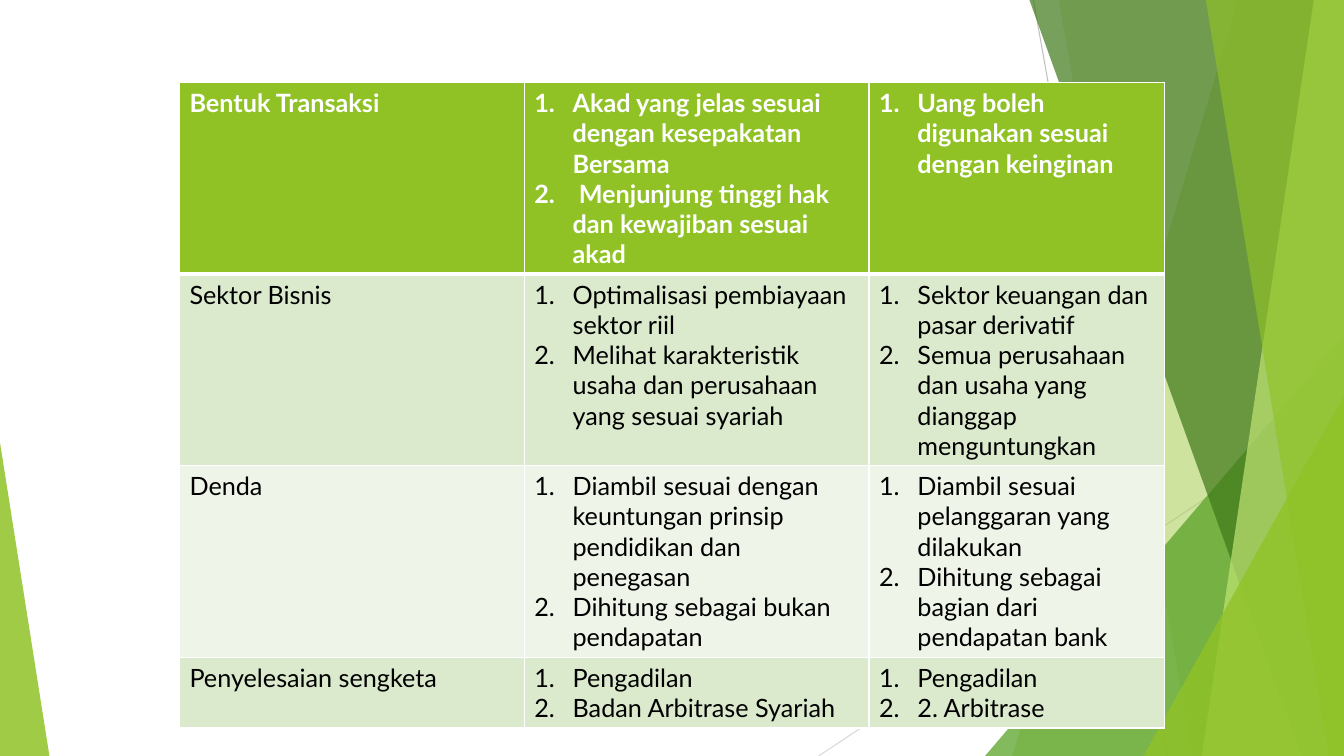
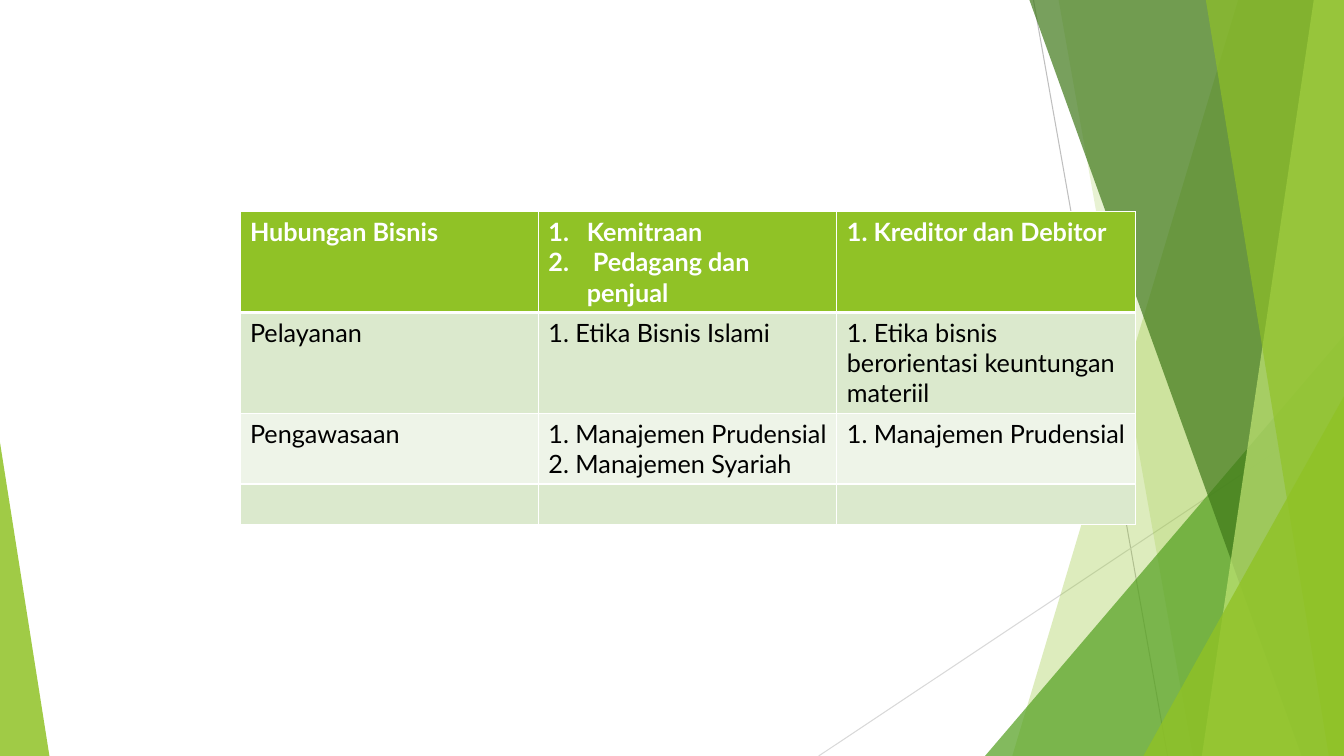
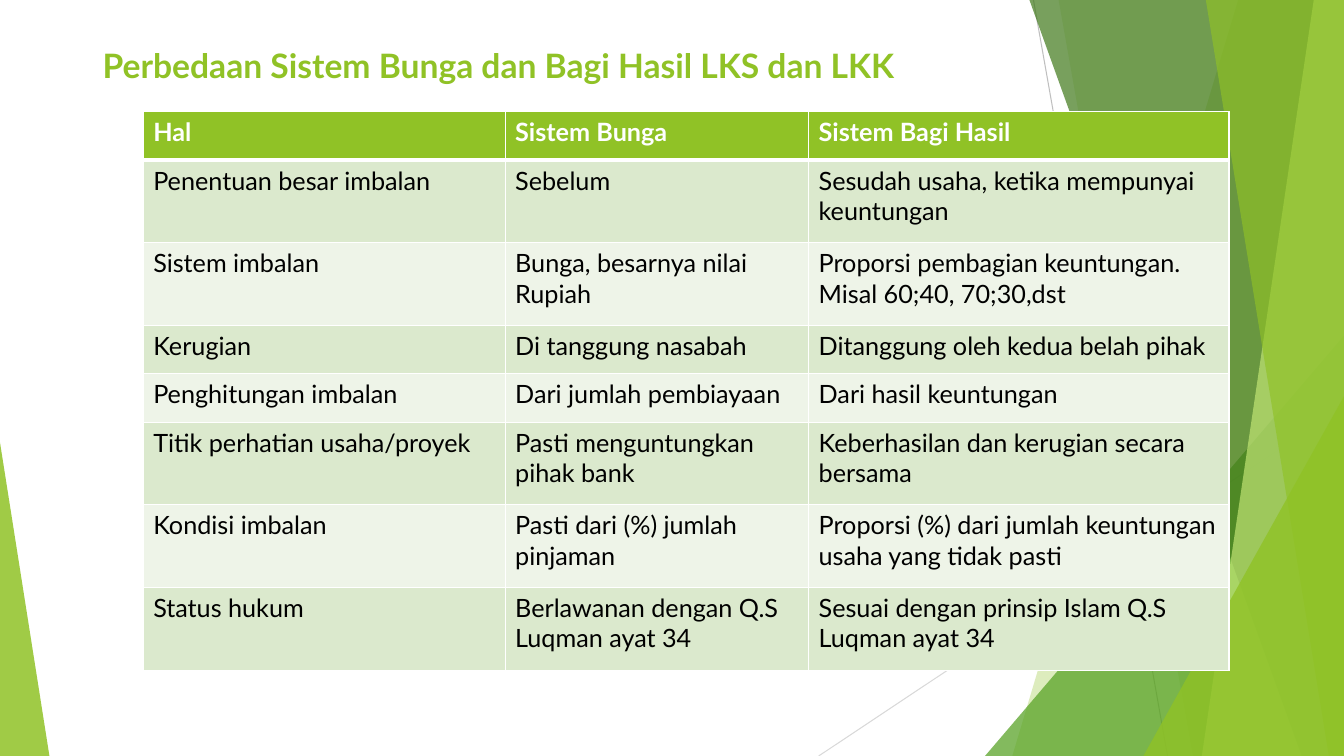
import pptx
import pptx.util
import pptx.dml.color
import pptx.enum.shapes
import pptx.oxml
import pptx.oxml.ns
import lxml.etree

WIDE, HIGH = 13.33, 7.5
FONT = "Lato"
HUES = {
    "lime": "90C226", "leaf": "54A021", "moss": "3F7819", "pale": "C0E474",
    "band": "DBE9CD", "mist": "EEF4E8", "ink": "000000", "white": "FFFFFF",
    "gray": "BFBFBF", "ash": "D9D9D9",
}

LINES = [
    ((10.25, 0), (11.58, HIGH), "gray"),
    ((WIDE, 4.03), (8.12, HIGH), "ash"),
]
DECOR = [
    ("ribbon", (12.28, 10.04), "lime", 30),
    ("ribbon", (10.5, 11.83), "lime", 20),
    ("corner", (9.77, 3.33, 3.56, 1), "leaf", 72),
    ("ribbon", (10.21, 12.91), "moss", 70),
    ("ribbon", (13.03, 11.92), "pale", 70),
    ("ribbon", (11.96, 13.18), "lime", 65),
    ("corner", (11.34, 3.93, 1.99, 1), "lime", 80),
    ("corner", (0, 4.39, 0.49, 0), "lime", 85),
]

SLIDES = [
    {
        "at": (1.78, 0.82),
        "cols": [3.42, 3.42, 2.93],
        "rows": [1.9, 1.9, 1.9, 0.7],
        "cells": [
            ["Bentuk Transaksi",
             ["Akad yang jelas sesuai dengan kesepakatan Bersama",
              " Menjunjung tinggi hak dan kewajiban sesuai akad"],
             ["Uang boleh digunakan sesuai dengan keinginan"]],
            ["Sektor Bisnis",
             ["Optimalisasi pembiayaan sektor riil",
              "Melihat karakteristik usaha dan perusahaan yang sesuai syariah"],
             ["Sektor keuangan dan pasar derivatif",
              "Semua perusahaan dan usaha yang dianggap menguntungkan"]],
            ["Denda",
             ["Diambil sesuai dengan keuntungan prinsip pendidikan dan penegasan",
              "Dihitung sebagai bukan pendapatan"],
             ["Diambil sesuai pelanggaran yang dilakukan",
              "Dihitung sebagai bagian dari pendapatan bank"]],
            ["Penyelesaian sengketa",
             ["Pengadilan", "Badan Arbitrase Syariah"],
             ["Pengadilan", "2. Arbitrase"]],
        ],
    },
    {
        "at": (2.38, 2.1),
        "cols": [2.96] * 3,
        "rows": [1, 1, 0.7, 0.4],
        "cells": [
            ["Hubungan Bisnis", ["Kemitraan", " Pedagang dan penjual"],
             "1. Kreditor dan Debitor"],
            ["Pelayanan", "1. Etika Bisnis Islami",
             "1. Etika bisnis berorientasi keuntungan materiil"],
            ["Pengawasaan", "1. Manajemen Prudensial 2. Manajemen Syariah",
             "1. Manajemen Prudensial"],
            ["", "", ""],
        ],
    },
    {
        "title": "Perbedaan Sistem Bunga dan Bagi Hasil LKS dan LKK",
        "at": (1.42, 1.11),
        "cols": [3.59, 3.01, 4.17],
        "rows": [0.48, 0.82, 0.82, 0.48, 0.48, 0.82, 0.82, 0.82],
        "cells": [
            ["Hal", "Sistem Bunga", "Sistem Bagi Hasil"],
            ["Penentuan besar imbalan", "Sebelum",
             "Sesudah usaha, ketika mempunyai keuntungan"],
            ["Sistem imbalan", "Bunga, besarnya nilai Rupiah",
             "Proporsi pembagian keuntungan. Misal 60;40, 70;30,dst"],
            ["Kerugian", "Di tanggung nasabah",
             "Ditanggung oleh kedua belah pihak"],
            ["Penghitungan imbalan", "Dari jumlah pembiayaan",
             "Dari hasil keuntungan"],
            ["Titik perhatian usaha/proyek", "Pasti menguntungkan pihak bank",
             "Keberhasilan dan kerugian secara bersama"],
            ["Kondisi imbalan", "Pasti dari (%) jumlah pinjaman",
             "Proporsi (%) dari jumlah keuntungan usaha yang tidak pasti"],
            ["Status hukum", "Berlawanan dengan Q.S Luqman ayat 34",
             "Sesuai dengan prinsip Islam Q.S Luqman ayat 34"],
        ],
    },
]

inch = pptx.util.Inches
tag = pptx.oxml.ns.qn


def tint(name):
    return pptx.dml.color.RGBColor.from_string(HUES[name])


def paint(fill, name):
    fill.solid()
    fill.fore_color.rgb = tint(name)


def style(para, size, hue, bold):
    font = para.font
    font.name, font.size, font.bold = FONT, pptx.util.Pt(size), bold
    font.color.rgb = tint(hue)


def draw_line(shapes, start, end, hue):
    kind = pptx.enum.shapes.MSO_CONNECTOR.STRAIGHT
    line = shapes.add_connector(kind, *map(inch, start + end))
    line.line.color.rgb = tint(hue)
    line.line.width = pptx.util.Pt(0.75)
    props = line.element.find(tag("p:spPr"))
    lxml.etree.SubElement(props, tag("a:effectLst"))
    return line


def draw_form(shapes, kind, spot, hue, alpha):
    if kind == "ribbon":
        top, base = spot
        edge = [(WIDE, 0), (WIDE, HIGH), (base, HIGH)]
        form = shapes.build_freeform(top * 100, 0, scale=inch(0.01))
        form.add_line_segments([(x * 100, y * 100) for x, y in edge])
        shape = form.convert_to_shape()
    else:
        left, top, width, tip = spot
        shape = shapes.add_shape(
            pptx.enum.shapes.MSO_SHAPE.ISOSCELES_TRIANGLE,
            *map(inch, (left, top, width, HIGH - top)))
        shape.adjustments[0] = tip
    shape.shadow.inherit = False
    shape.line.fill.background()
    paint(shape.fill, hue)
    color = shape.element.find(".//" + tag("a:srgbClr"))
    lxml.etree.SubElement(color, tag("a:alpha"), val=str(alpha * 1000))
    return shape


def dress(layout, slide):
    home = layout.shapes.element
    for holder in list(layout.placeholders):
        home.remove(holder.element)
    parts = [draw_line(slide.shapes, *line) for line in LINES]
    parts += [draw_form(slide.shapes, *form) for form in DECOR]
    for part in parts:
        home.append(part.element)


def number(para):
    props = para._p.get_or_add_pPr()
    props.set("marL", str(inch(0.38)))
    props.set("indent", str(-inch(0.38)))
    lxml.etree.SubElement(props, tag("a:buFont"), typeface="+mj-lt")
    lxml.etree.SubElement(props, tag("a:buAutoNum"), type="arabicPeriod")


def border(cell, row):
    props = cell._tc.get_or_add_tcPr()
    sides = {"lnL": 1, "lnR": 1, "lnT": 3 if row == 1 else 1,
             "lnB": 3 if row == 0 else 1}
    for slot, (side, width) in enumerate(sides.items()):
        line = lxml.etree.Element(tag("a:" + side), w=str(pptx.util.Pt(width)))
        fill = lxml.etree.SubElement(line, tag("a:solidFill"))
        lxml.etree.SubElement(fill, tag("a:srgbClr"), val=HUES["white"])
        props.insert(slot, line)


def fill_cell(cell, text, row):
    head = row == 0
    paint(cell.fill, "lime" if head else "band" if row % 2 else "mist")
    border(cell, row)
    listed = isinstance(text, list)
    cell.text = "\n".join(text) if listed else text
    for para in cell.text_frame.paragraphs:
        if listed:
            number(para)
        style(para, 18, "white" if head else "ink", head)


def draw_table(slide, page):
    cols, rows = page["cols"], page["rows"]
    size = (sum(cols), sum(rows))
    table = slide.shapes.add_table(
        len(rows), len(cols), *map(inch, page["at"] + size)).table
    table.horz_banding = False
    for col, width in zip(table.columns, cols):
        col.width = inch(width)
    for row, height in zip(table.rows, rows):
        row.height = inch(height)
    for row, texts in enumerate(page["cells"]):
        for col, text in enumerate(texts):
            fill_cell(table.cell(row, col), text, row)


def draw_title(slide, text):
    box = slide.shapes.add_textbox(*map(inch, (0.92, 0.4, 11.5, 0.57)))
    box.text_frame.word_wrap = True
    box.text_frame.text = text
    style(box.text_frame.paragraphs[0], 24, "lime", True)


def main():
    deck = pptx.Presentation()
    deck.slide_width, deck.slide_height = inch(WIDE), inch(HIGH)
    blank = deck.slide_layouts[6]
    for page in SLIDES:
        slide = deck.slides.add_slide(blank)
        if page is SLIDES[0]:
            dress(blank, slide)
        if "title" in page:
            draw_title(slide, page["title"])
        draw_table(slide, page)
    deck.save("out.pptx")


if __name__ == "__main__":
    main()
